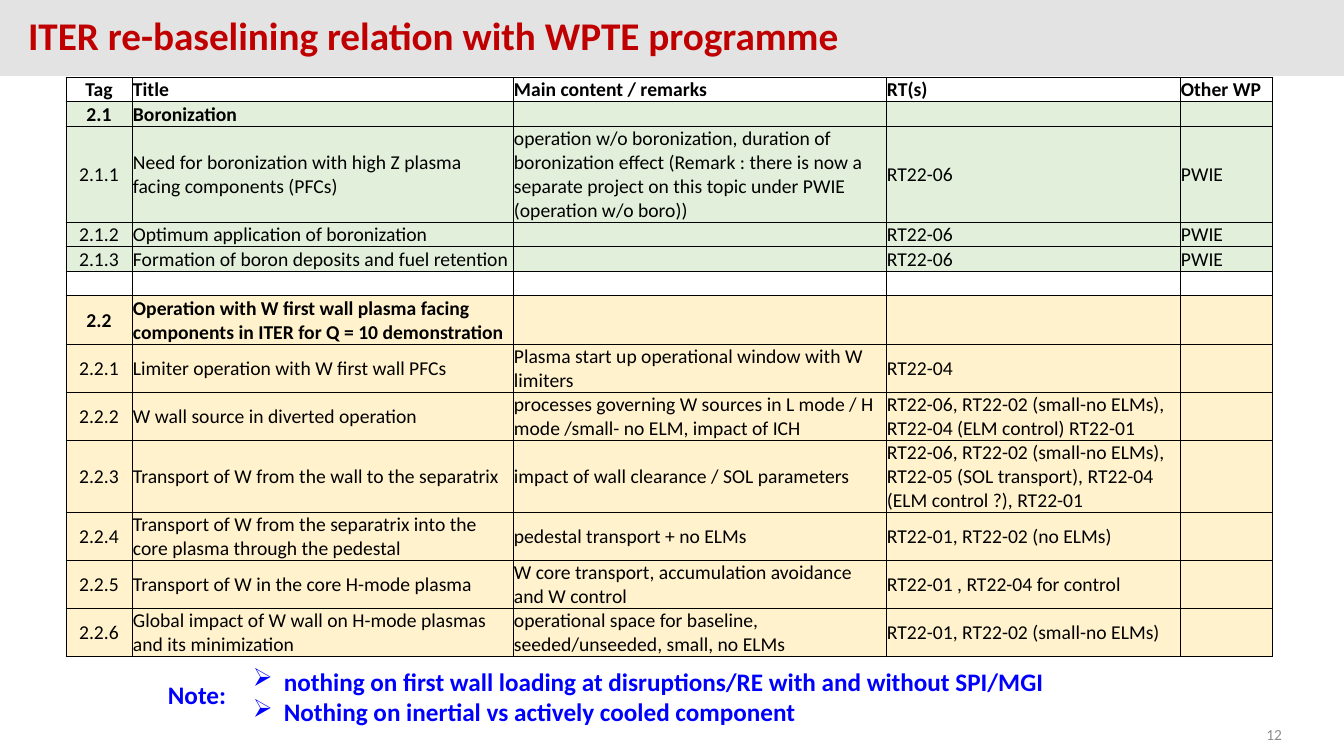
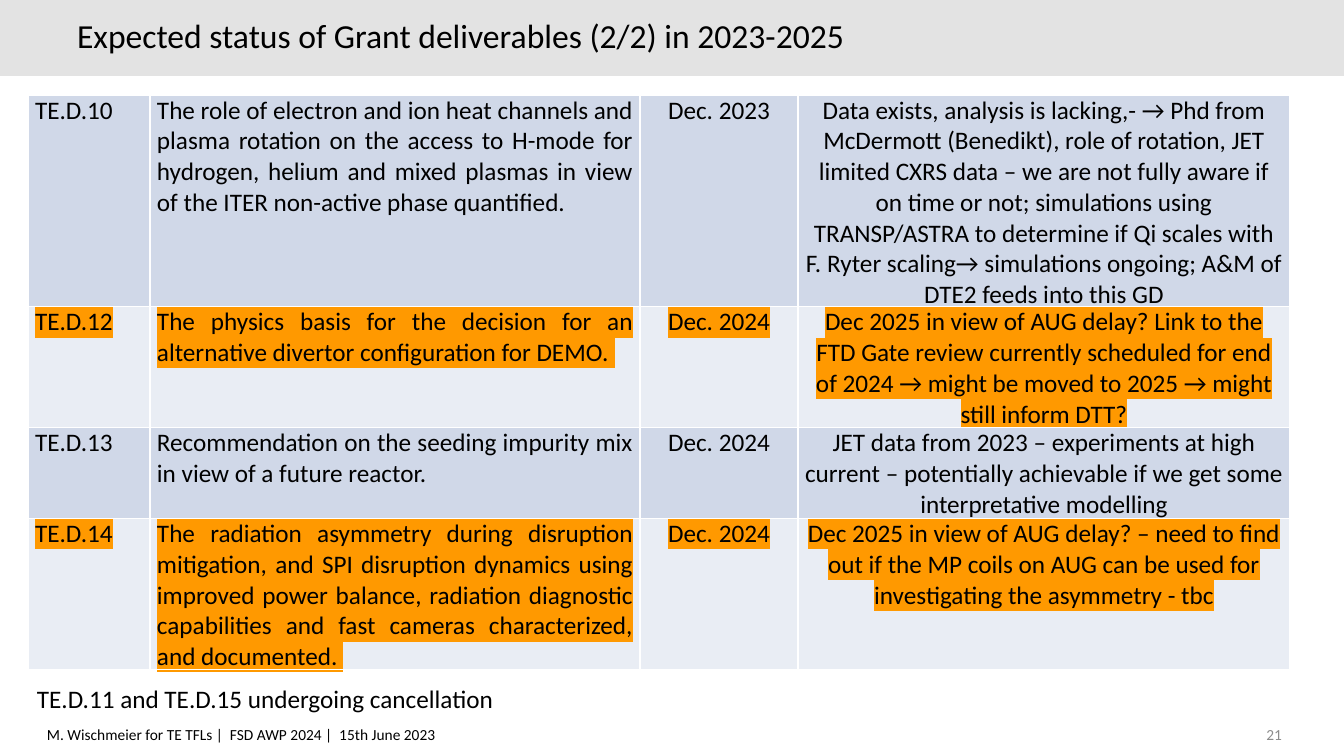
from lxml import etree
from pptx import Presentation
from pptx import util as u
from pptx.dml.color import RGBColor
from pptx.enum import shapes, text
from pptx.oxml.ns import qn

SCALE = 12192000 / 1344  # EMU in one px
FONT = "Calibri"
COLORS = {
    "band": "E3E3E3", "black": "000000", "white": "FFFFFF", "red": "C00000",
    "blue": "0000FF", "gray": "8C8C8C", "green": "E2EFDA", "cream": "FFF2CC",
    "steel": "D0D8E8", "mist": "E9EDF4", "orange": "FF9900",
}
LEFT, CENTER, RIGHT, JUSTIFY = (
    text.PP_ALIGN.LEFT, text.PP_ALIGN.CENTER, text.PP_ALIGN.RIGHT, text.PP_ALIGN.JUSTIFY)

# Fill, number of text lines, cell texts
TOPIC_ROWS = [
    (None, 1, ("Tag", "Title", "Main content / remarks", "RT(s)", "Other WP")),
    ("green", 1, ("2.1", "Boronization", "", "", "")),
    ("green", 4, ("2.1.1", "Need for boronization with high Z plasma facing components (PFCs)",
                  "operation w/o boronization, duration of boronization effect (Remark : there is "
                  "now a separate project on this topic under PWIE (operation w/o boro))",
                  "RT22-06", "PWIE")),
    ("green", 1, ("2.1.2", "Optimum application of boronization", "", "RT22-06", "PWIE")),
    ("green", 1, ("2.1.3", "Formation of boron deposits and fuel retention", "",
                  "RT22-06", "PWIE")),
    (None, 1, ("", "", "", "", "")),
    ("cream", 2, ("2.2", "Operation with W first wall plasma facing components in ITER "
                  "for Q = 10 demonstration", "", "", "")),
    ("cream", 2, ("2.2.1", "Limiter operation with W first wall PFCs",
                  "Plasma start up operational window with W limiters", "RT22-04", "")),
    ("cream", 2, ("2.2.2", "W wall source in diverted operation",
                  "processes governing W sources in L mode / H mode /small- no ELM, impact of ICH",
                  "RT22-06, RT22-02 (small-no ELMs), RT22-04 (ELM control) RT22-01", "")),
    ("cream", 3, ("2.2.3", "Transport of W from the wall to the separatrix",
                  "impact of wall clearance / SOL parameters",
                  "RT22-06, RT22-02 (small-no ELMs), RT22-05 (SOL transport), "
                  "RT22-04 (ELM control ?), RT22-01", "")),
    ("cream", 2, ("2.2.4", "Transport of W from the separatrix into the core plasma "
                  "through the pedestal",
                  "pedestal transport + no ELMs", "RT22-01, RT22-02 (no ELMs)", "")),
    ("cream", 2, ("2.2.5", "Transport of W in the core H-mode plasma",
                  "W core transport, accumulation avoidance and W control",
                  "RT22-01 , RT22-04 for control", "")),
    ("cream", 2, ("2.2.6", "Global impact of W wall on H-mode plasmas and its minimization",
                  "operational space for baseline, seeded/unseeded, small, no ELMs",
                  "RT22-01, RT22-02 (small-no ELMs)", "")),
]
BOLD_TAGS = ("Tag", "2.1", "2.2")

DELIVERABLE_ROWS = [
    ("steel", 7, ("TE.D.10", "The role of electron and ion heat channels and plasma rotation on "
                  "the access to H-mode for hydrogen, helium and mixed plasmas in view of the "
                  "ITER non-active phase quantified.", "Dec. 2023",
                  "Data exists, analysis is lacking,- → Phd from McDermott (Benedikt), role of "
                  "rotation, JET limited CXRS data – we are not fully aware if on time or not; "
                  "simulations using TRANSP/ASTRA to determine if Qi scales with F. Ryter "
                  "scaling→ simulations ongoing; A&M of DTE2 feeds into this GD")),
    ("mist", 4, ("TE.D.12", "The physics basis for the decision for an alternative divertor "
                 "configuration for DEMO. ", "Dec. 2024",
                 "Dec 2025 in view of AUG delay? Link to the FTD Gate review currently scheduled "
                 "for end of 2024 → might be moved to 2025 → might still inform DTT?")),
    ("steel", 3, ("TE.D.13", "Recommendation on the seeding impurity mix in view of a future "
                  "reactor.", "Dec. 2024",
                  "JET data from 2023 – experiments at high current – potentially achievable "
                  "if we get some interpretative modelling")),
    ("mist", 5, ("TE.D.14", "The radiation asymmetry during disruption mitigation, and SPI "
                 "disruption dynamics using improved power balance, radiation diagnostic "
                 "capabilities and fast cameras characterized, and documented. ", "Dec. 2024",
                 "Dec 2025 in view of AUG delay? – need to find out if the MP coils on AUG "
                 "can be used for investigating the asymmetry - tbc")),
]


def px(length):
    return u.Emu(round(length * SCALE))


def rgb(name):
    return RGBColor.from_string(COLORS[name])


def add_color(parent, name):
    etree.SubElement(parent, qn("a:srgbClr"), val=COLORS[name])


def write(para, content, size=18, color="black", bold=False, align=LEFT, highlight=None):
    """Fill a paragraph with one formatted run; an empty one keeps only its size."""
    para.alignment = align
    if not content:
        etree.SubElement(para._p, qn("a:endParaRPr"), sz=str(size * 100))
        return
    span = para.add_run()
    span.text = content
    span.font.name, span.font.size, span.font.bold = FONT, u.Pt(size), bold
    span.font.color.rgb = rgb(color)
    if highlight:
        mark = etree.Element(qn("a:highlight"))
        add_color(mark, highlight)
        span._r.rPr.find(qn("a:solidFill")).addnext(mark)


def add_bullet(para, mark, indent):
    props = para._p.get_or_add_pPr()
    props.set("marL", str(px(indent)))
    props.set("indent", str(-px(indent)))
    etree.SubElement(props, qn("a:buChar"), char=mark)


def add_text(page, area, lines, bullet=None, wrap=True, **style):
    box = page.shapes.add_textbox(*map(px, area))
    frame = box.text_frame
    frame.word_wrap = wrap
    for index, line in enumerate(lines):
        para = frame.add_paragraph() if index else frame.paragraphs[0]
        if bullet:
            add_bullet(para, bullet, indent=31)
        write(para, line, **style)


def add_band(page):
    """Put the title band on the layout, behind everything."""
    band = page.shapes.add_shape(shapes.MSO_SHAPE.RECTANGLE, 0, 0, px(1344), px(76))
    band.shadow.inherit = False
    band.fill.solid()
    band.fill.fore_color.rgb = rgb("band")
    band.line.fill.background()
    band._element.nvSpPr.cNvPr.set("id", "100")
    page.slide_layout.shapes._spTree.insert(2, band._element)


def add_page(deck, layout, title, at, number, **style):
    page = deck.slides.add_slide(layout)
    box = page.shapes.title
    box.left, box.top, box.width, box.height = map(px, (*at, 1109, 50))
    frame = box.text_frame
    frame.auto_size = text.MSO_AUTO_SIZE.NONE
    frame.vertical_anchor = text.MSO_ANCHOR.MIDDLE
    para = frame.paragraphs[0]
    para.line_spacing = u.Pt(24)
    write(para, title, **style)
    add_text(page, (1212, 720, 80, 22), [number], size=11, color="gray", align=RIGHT)
    return page


def set_borders(cell, color, width):
    props = cell._tc.get_or_add_tcPr()
    for side in ("lnL", "lnR", "lnT", "lnB"):
        line = etree.SubElement(props, qn(f"a:{side}"), w=str(u.Pt(width)))
        add_color(etree.SubElement(line, qn("a:solidFill")), color)


def add_grid(page, at, widths, line_height, rows, aligns, margins, anchor, border, style_of):
    """Draw a table; style_of gives the run format of a row from its tag."""
    height = line_height * sum(lines for _, lines, _ in rows)
    frame = page.shapes.add_table(len(rows), len(widths),
                                  *map(px, (*at, sum(widths), height)))
    table = frame.table
    table.first_row = table.horz_banding = False
    for column, width in zip(table.columns, widths):
        column.width = px(width)
    for row, (fill, lines, values) in zip(table.rows, rows):
        row.height = px(line_height * lines)
        for cell, value, align in zip(row.cells, values, aligns):
            set_borders(cell, *border)
            if fill:
                cell.fill.solid()
                cell.fill.fore_color.rgb = rgb(fill)
            else:
                cell.fill.background()
            (cell.margin_left, cell.margin_top,
             cell.margin_right, cell.margin_bottom) = map(px, margins)
            cell.vertical_anchor = anchor
            write(cell.text_frame.paragraphs[0], value, align=align, **style_of(values[0]))


def topic_style(tag):
    return {"size": 14, "bold": tag in BOLD_TAGS}


def deliverable_style(tag):
    return {"highlight": "orange" if tag in ("TE.D.12", "TE.D.14") else None}


def build_topics(deck, layout):
    page = add_page(deck, layout, "ITER re-baselining relation with WPTE programme",
                    (18, 17), "12", size=28, color="red", bold=True)
    add_band(page)
    add_grid(page, (66, 77), (66, 381, 373, 294, 92), 24, TOPIC_ROWS,
             (CENTER, LEFT, LEFT, LEFT, LEFT), (1, 1, 1, 0), text.MSO_ANCHOR.MIDDLE,
             ("black", 0.5), topic_style)
    note = {"color": "blue", "bold": True}
    add_text(page, (243, 661, 1080, 72),
             ["nothing on first wall loading at disruptions/RE with and without SPI/MGI",
              "Nothing on inertial vs actively cooled component"], bullet="➢", **note)
    add_text(page, (158, 674, 86, 40), ["Note:"], wrap=False, **note)


def build_deliverables(deck, layout):
    page = add_page(deck, layout, "Expected status of Grant deliverables (2/2) in 2023-2025",
                    (67, 13), "21", size=24)
    add_text(page, (37, 720, 412, 36),
             ["M. Wischmeier for TE TFLs |  FSD AWP 2024 |  15th June 2023"], size=11)
    add_grid(page, (28, 95), (122, 490, 158, 492), 30, DELIVERABLE_ROWS,
             (JUSTIFY, JUSTIFY, CENTER, CENTER), (7, 0, 7, 0), text.MSO_ANCHOR.TOP,
             ("white", 1), deliverable_style)
    add_text(page, (27, 678, 482, 40), ["TE.D.11 and TE.D.15 undergoing cancellation"],
             wrap=False)


def main():
    deck = Presentation()
    deck.slide_width, deck.slide_height = px(1344), px(756)
    layout = deck.slide_layouts.get_by_name("Title Only")
    build_topics(deck, layout)
    build_deliverables(deck, layout)
    deck.save("out.pptx")


if __name__ == "__main__":
    main()
